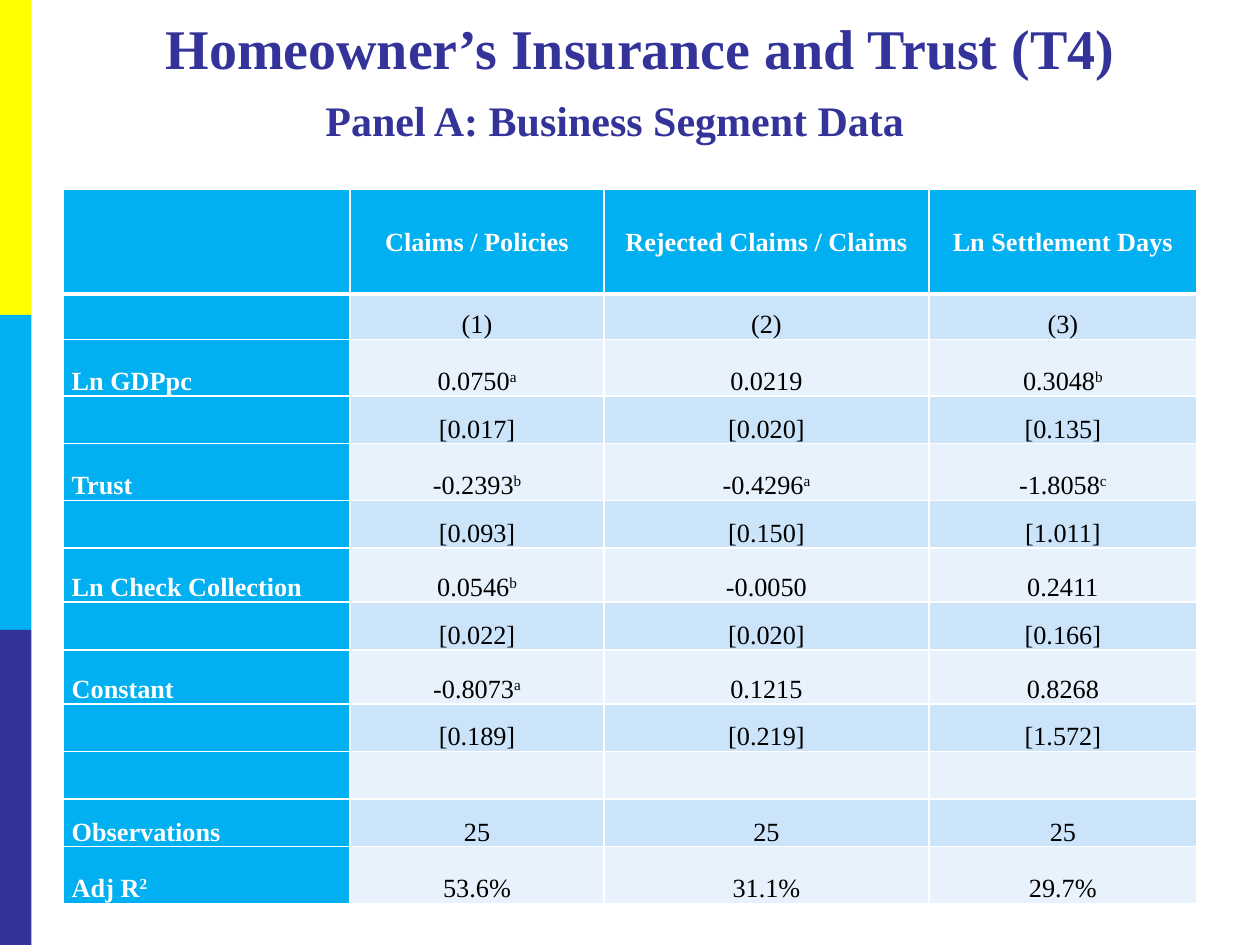
from typing import NamedTuple

import pptx
import pptx.dml.color
import pptx.enum.shapes
import pptx.enum.text
import pptx.oxml
import pptx.util
from lxml import etree

Pt = pptx.util.Pt
RGB = pptx.dml.color.RGBColor
ALIGN = pptx.enum.text.PP_ALIGN
ANCHOR = pptx.enum.text.MSO_ANCHOR

FONT = "Times New Roman"
WHITE = RGB(0xFF, 0xFF, 0xFF)
BLACK = RGB(0, 0, 0)
YELLOW = RGB(0xFF, 0xFF, 0)
SKY = RGB(0, 0xB0, 0xF0)
NAVY = RGB(0x33, 0x33, 0x99)
BANDS = (RGB(0xE7, 0xF2, 0xFC), RGB(0xCC, 0xE4, 0xF9))
STRIPES = (YELLOW, SKY, NAVY)
WIDTHS = (164, 145.2, 185.6, 153.2)


class Row(NamedTuple):
    height: float
    texts: tuple[str, ...]


ROWS = (
    Row(60, ("", "Claims / Policies", "Rejected Claims / Claims", "Ln Settlement Days")),
    Row(26, ("", "(1)", "(2)", "(3)")),
    Row(32.4, ("Ln GDPpc", "0.0750^a", "0.0219", "0.3048^b")),
    Row(27.2, ("", "[0.017]", "[0.020]", "[0.135]")),
    Row(32.4, ("Trust", "-0.2393^b", "-0.4296^a", "-1.8058^c")),
    Row(27.2, ("", "[0.093]", "[0.150]", "[1.011]")),
    Row(31, ("Ln Check Collection", "0.0546^b", "-0.0050", "0.2411")),
    Row(27.2, ("", "[0.022]", "[0.020]", "[0.166]")),
    Row(31, ("Constant", "-0.8073^a", "0.1215", "0.8268")),
    Row(27.2, ("", "[0.189]", "[0.219]", "[1.572]")),
    Row(27.2, ("", "", "", "")),
    Row(27.2, ("Observations", "25", "25", "25")),
    Row(32.4, ("Adj R^2", "53.6%", "31.1%", "29.7%")),
)


def add_stripe(slide, index: int, color: RGB) -> None:
    rect = pptx.enum.shapes.MSO_SHAPE.RECTANGLE
    bar = slide.shapes.add_shape(rect, Pt(0), Pt(180 * index), Pt(18), Pt(180))
    bar.shadow.inherit = False
    bar.fill.solid()
    bar.fill.fore_color.rgb = color
    bar.line.fill.background()


def add_title(slide) -> None:
    frame = slide.shapes.add_textbox(Pt(24), Pt(12), Pt(684), Pt(68.4)).text_frame
    frame.word_wrap = True
    frame.vertical_anchor = ANCHOR.MIDDLE
    para = frame.paragraphs[0]
    para.alignment = ALIGN.CENTER
    para.font.name = FONT
    para.font.color.rgb = NAVY
    para.font.bold = True
    para.font.size = Pt(32)
    para.add_run().text = "Homeowner’s Insurance and Trust (T4)"
    para.add_line_break()
    panel = para.add_run()
    panel.text = "Panel A: Business Segment Data"
    panel.font.size = Pt(24)
    para.add_run().text = "\t"


def add_edge(cell, side: str, width: float) -> None:
    props = cell._tc.get_or_add_tcPr()
    tag = pptx.oxml.ns.qn
    line = etree.SubElement(props, tag(f"a:ln{side}"), w=str(int(Pt(width))))
    fill = etree.SubElement(line, tag("a:solidFill"))
    etree.SubElement(fill, tag("a:srgbClr"), val=str(WHITE))


def fill_cell(cell, text: str, row: int, col: int) -> None:
    head = row == 0
    label = head or col == 0
    for side in "LRTB":
        thick = (row, side) in ((0, "B"), (1, "T"))
        add_edge(cell, side, 3 if thick else 1)
    cell.fill.solid()
    cell.fill.fore_color.rgb = SKY if label else BANDS[row % 2]
    cell.margin_left = cell.margin_right = Pt(5)
    cell.margin_top = cell.margin_bottom = Pt(0)
    cell.vertical_anchor = ANCHOR.MIDDLE if head else ANCHOR.BOTTOM
    para = cell.text_frame.paragraphs[0]
    para.alignment = ALIGN.CENTER if col else ALIGN.LEFT
    para.line_spacing = 1.07
    para.font.name = FONT
    para.font.size = Pt(15)
    para.font.bold = label
    para.font.color.rgb = WHITE if label else BLACK
    base, _, mark = text.partition("^")
    if base:
        para.add_run().text = base
    if mark:
        run = para.add_run()
        run.text = mark
        run._r.get_or_add_rPr().set("baseline", "30000")


def add_grid(slide) -> None:
    high = sum(row.height for row in ROWS)
    shape = slide.shapes.add_table(
        len(ROWS), len(WIDTHS), Pt(36), Pt(108), Pt(sum(WIDTHS)), Pt(high)
    )
    table = shape.table
    table.first_col = True
    for col, width in zip(table.columns, WIDTHS):
        col.width = Pt(width)
    for i, row in enumerate(ROWS):
        table.rows[i].height = Pt(row.height)
        for j, text in enumerate(row.texts):
            fill_cell(table.cell(i, j), text, i, j)


def main() -> None:
    deck = pptx.Presentation()
    deck.slide_width, deck.slide_height = Pt(720), Pt(540)
    slide = deck.slides.add_slide(deck.slide_layouts[6])
    for index, color in enumerate(STRIPES):
        add_stripe(slide, index, color)
    add_title(slide)
    add_grid(slide)
    deck.save("out.pptx")


if __name__ == "__main__":
    main()
